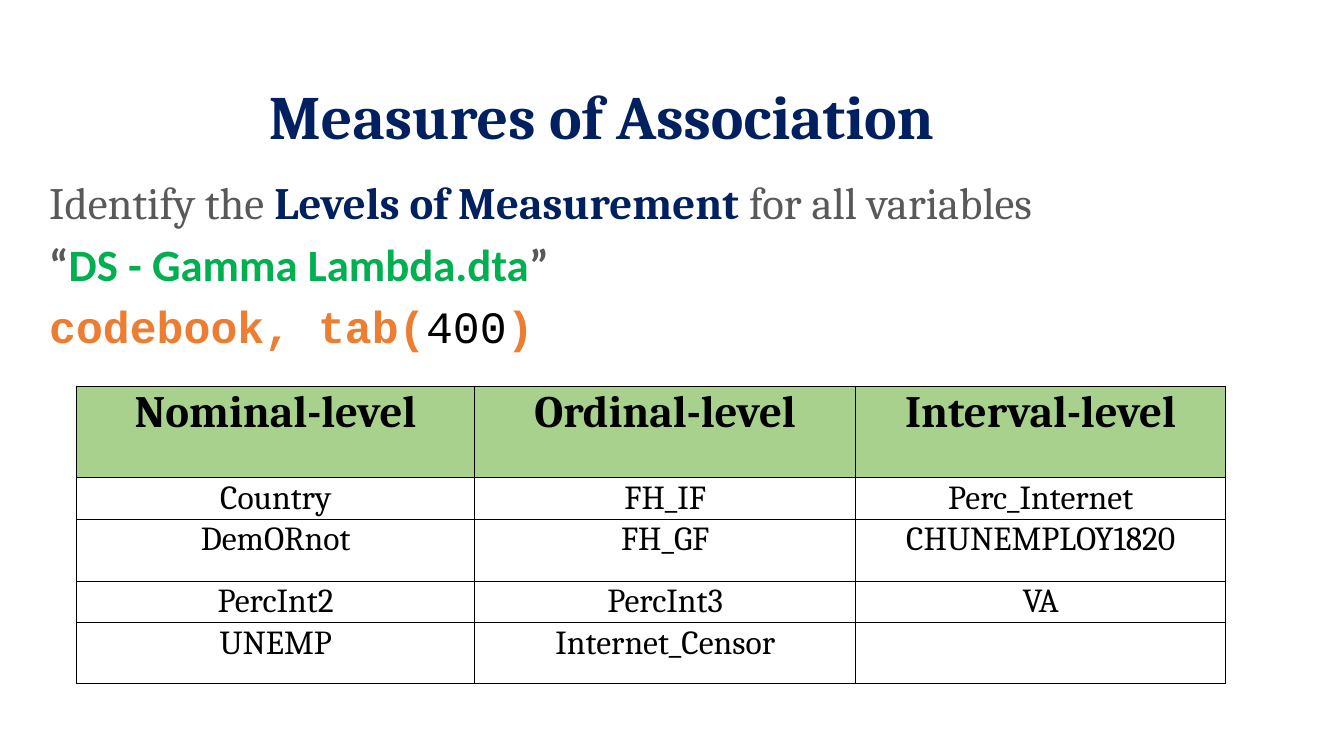
from lxml import etree
from pptx import Presentation
from pptx import util as u
from pptx.dml import color
from pptx.enum import text
from pptx.oxml import ns

NAVY, GREY, GREEN, ORANGE, BLACK = "002060", "595959", "00B050", "ED7D31", "000000"
HEADER_FILL = "A9D18E"

INTRO = [
    [("Identify the ", "Cambria", GREY, False),
     ("Levels of Measurement ", "Cambria", NAVY, True),
     ("for all variables", "Cambria", GREY, False)],
    [("“", "Calibri", GREY, True),
     ("DS - Gamma Lambda.dta", "Calibri", GREEN, True),
     ("”", "Calibri", GREY, True)],
    [("codebook, tab(", "Courier New", ORANGE, True),
     ("400", "Courier New", BLACK, False),
     (")", "Courier New", ORANGE, True)],
]
LEVELS = [
    ["Nominal-level", "Ordinal-level", "Interval-level"],
    ["Country", "FH_IF", "Perc_Internet"],
    ["DemORnot", "FH_GF", "CHUNEMPLOY1820"],
    ["PercInt2", "PercInt3", "VA"],
    ["UNEMP", "Internet_Censor", ""],
]
COLUMN_WIDTHS = [284.4, 272.2, 264.2]
ROW_HEIGHTS = [65.5, 27.4, 44.6, 27.4, 43.2]


def rgb(value):
    return color.RGBColor.from_string(value)


def apply(target, values):
    for name, value in values.items():
        setattr(target, name, value)


def add_run(paragraph, words, font, hex_color, bold, size):
    run = paragraph.add_run()
    run.text = words
    apply(run.font, {"name": font, "size": u.Pt(size), "bold": bold})
    run.font.color.rgb = rgb(hex_color)


def add_text(slide, box, paragraphs, size, frame_format, paragraph_format):
    frame = slide.shapes.add_textbox(*map(u.Pt, box)).text_frame
    apply(frame, {"word_wrap": True, **frame_format})
    for index, runs in enumerate(paragraphs):
        paragraph = frame.add_paragraph() if index else frame.paragraphs[0]
        apply(paragraph, {"line_spacing": 0.9, **paragraph_format})
        for run in runs:
            add_run(paragraph, *run, size)
        yield paragraph


def add_borders(cell):
    properties = cell._tc.get_or_add_tcPr()
    for side in ("a:lnL", "a:lnR", "a:lnT", "a:lnB"):
        line = etree.SubElement(properties, ns.qn(side), w=str(u.Pt(1)))
        fill = etree.SubElement(line, ns.qn("a:solidFill"))
        etree.SubElement(fill, ns.qn("a:srgbClr"), val=BLACK)


def fill_cell(cell, words, header):
    apply(cell, {"margin_left": u.Pt(7.9), "margin_right": u.Pt(7.9),
                 "margin_top": u.Pt(0.7), "margin_bottom": u.Pt(0)})
    add_borders(cell)
    if header:
        cell.fill.solid()
        cell.fill.fore_color.rgb = rgb(HEADER_FILL)
    else:
        cell.fill.background()
    if words:
        paragraph = cell.text_frame.paragraphs[0]
        paragraph.alignment = text.PP_ALIGN.CENTER
        add_run(paragraph, words, "Cambria", BLACK, header, 32 if header else 24)


def add_levels_table(slide, left, top):
    box = (left, top, sum(COLUMN_WIDTHS), sum(ROW_HEIGHTS))
    table = slide.shapes.add_table(
        len(LEVELS), len(COLUMN_WIDTHS), *map(u.Pt, box)).table
    apply(table, {"first_row": False, "horz_banding": False})
    for column, width in zip(table.columns, COLUMN_WIDTHS):
        column.width = u.Pt(width)
    for index, (row, height) in enumerate(zip(table.rows, ROW_HEIGHTS)):
        row.height = u.Pt(height)
        for cell, words in zip(row.cells, LEVELS[index]):
            fill_cell(cell, words, index == 0)


def main():
    presentation = Presentation()
    apply(presentation, {"slide_width": u.Pt(960), "slide_height": u.Pt(540)})
    slide = presentation.slides.add_slide(presentation.slide_layouts[6])
    title = [[("Measures of Association", "Cambria", NAVY, True)]]
    list(add_text(slide, (24.5, 20.2, 810.7, 92.2), title, 44,
                  {"vertical_anchor": text.MSO_ANCHOR.BOTTOM},
                  {"alignment": text.PP_ALIGN.CENTER}))
    for paragraph in add_text(slide, (24.5, 125.3, 902.9, 364.3), INTRO, 32,
                              {}, {"space_before": u.Pt(10)}):
        paragraph._p.get_or_add_pPr().set("marL", str(u.Pt(3.6)))
    add_levels_table(slide, 54.7, 275.8)
    presentation.save("out.pptx")


if __name__ == "__main__":
    main()
